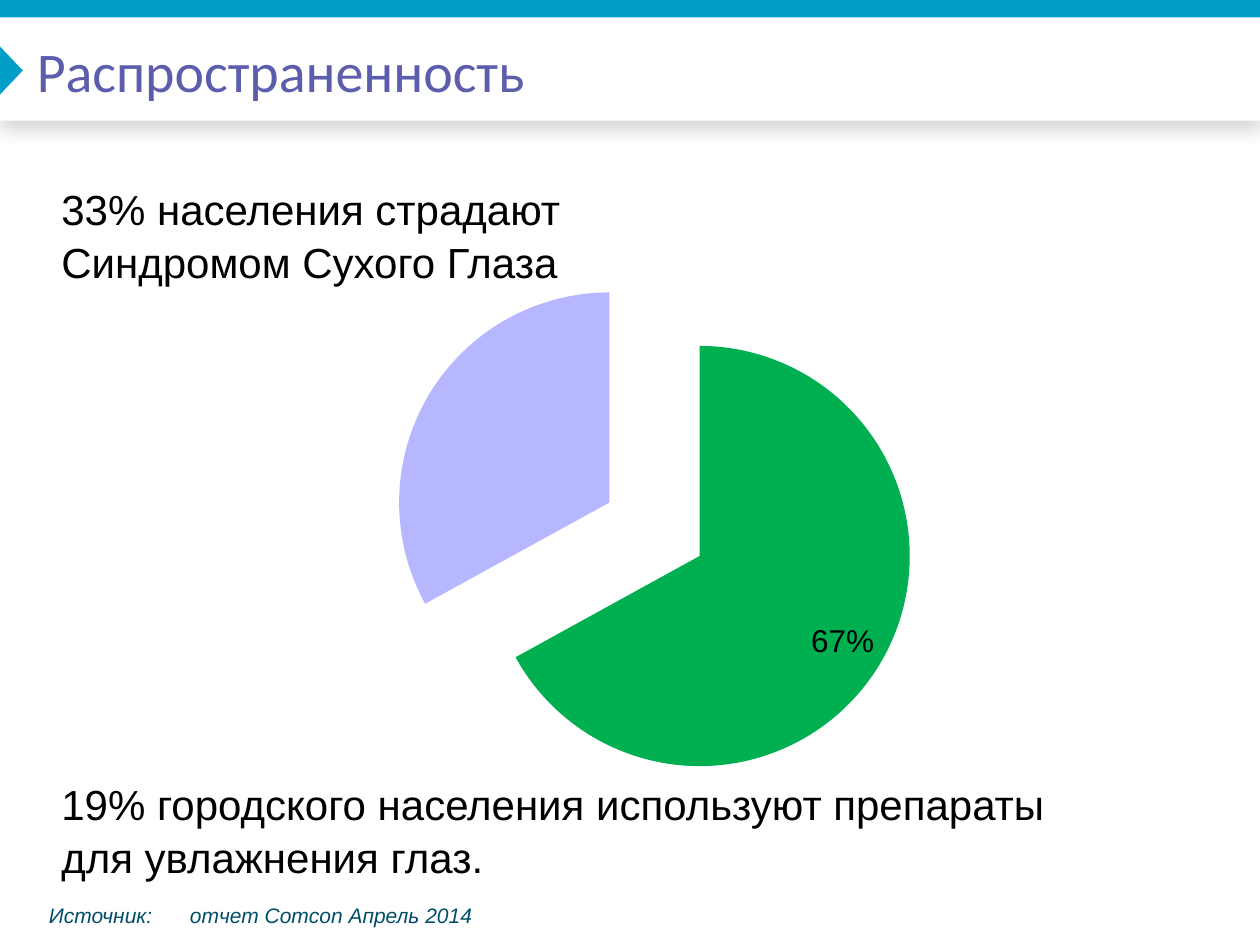
from pptx import Presentation
from pptx.chart.data import CategoryChartData
from pptx.dml.color import RGBColor
from pptx.enum.chart import XL_CHART_TYPE, XL_LABEL_POSITION
from pptx.enum.shapes import MSO_SHAPE
from pptx.enum.text import MSO_ANCHOR, MSO_AUTO_SIZE, PP_ALIGN
from pptx.oxml import parse_xml
from pptx.oxml.ns import nsdecls
from pptx.util import Pt

BLACK = RGBColor(0x00, 0x00, 0x00)
WHITE = RGBColor(0xFF, 0xFF, 0xFF)
CYAN = RGBColor(0x03, 0x9E, 0xC7)
VIOLET = RGBColor(0x5D, 0x5D, 0xAE)
TEAL = RGBColor(0x00, 0x4E, 0x69)
GREEN = RGBColor(0x00, 0xB0, 0x50)
LILAC = RGBColor(0xB7, 0xB7, 0xFF)

BAND_SHADOW = (
    f'<a:effectLst {nsdecls("a")}>'
    '<a:outerShdw blurRad="127000" dist="63500" dir="5400000" algn="t" rotWithShape="0">'
    '<a:srgbClr val="000000"><a:alpha val="15000"/></a:srgbClr>'
    '</a:outerShdw></a:effectLst>'
)


def write_text(shape, text, *, size, color, font="Arial", italic=False,
               inset=None, anchor=MSO_ANCHOR.TOP, spacing=None):
    """Fill a shape with one left-aligned paragraph and format it."""
    frame = shape.text_frame
    frame.text = text
    frame.word_wrap = True
    frame.auto_size = MSO_AUTO_SIZE.NONE
    frame.vertical_anchor = anchor
    if inset is not None:
        frame.margin_left = frame.margin_right = Pt(inset)
        frame.margin_top = frame.margin_bottom = Pt(inset)
    paragraph = frame.paragraphs[0]
    paragraph.alignment = PP_ALIGN.LEFT
    if spacing:
        paragraph.line_spacing = spacing
    for run in paragraph.runs:
        run.font.name = font
        run.font.size = Pt(size)
        run.font.italic = italic
        run.font.color.rgb = color
    return paragraph


class SlideBuilder:
    def __init__(self, slide, font="Arial"):
        self.slide = slide
        self.font = font

    def block(self, preset, left, top, width, height, color, rotation=0):
        shape = self.slide.shapes.add_shape(
            preset, Pt(left), Pt(top), Pt(width), Pt(height))
        shape.shadow.inherit = False
        shape.fill.solid()
        shape.fill.fore_color.rgb = color
        shape.line.fill.background()
        shape.rotation = rotation
        return shape

    def title(self, text, left, top, width, height):
        title = self.slide.shapes.title
        title.left, title.top = Pt(left), Pt(top)
        title.width, title.height = Pt(width), Pt(height)
        write_text(title, text, size=32, color=VIOLET, font="Calibri", inset=0)
        # Bring the title in front of the header band
        self.slide.shapes.element.append(title.element)

    def text(self, text, left, top, width, height, **style):
        box = self.slide.shapes.add_textbox(
            Pt(left), Pt(top), Pt(width), Pt(height))
        return write_text(box, text, font=self.font, **style)

    def pie(self, shares, colors, left, top, width, height, explosion):
        data = CategoryChartData(number_format="General")
        data.categories = [str(i + 1) for i in range(len(shares))]
        data.add_series("Series 1", shares)
        chart = self.slide.shapes.add_chart(
            XL_CHART_TYPE.PIE, Pt(left), Pt(top), Pt(width), Pt(height), data).chart
        chart.has_legend = False
        chart.has_title = False
        chart.font.name = self.font
        chart.font.size = Pt(18)
        chart.font.color.rgb = BLACK

        # Pull the slices apart
        series = chart.plots[0].series[0]
        series._element.cat.addprevious(
            parse_xml(f'<c:explosion {nsdecls("c")} val="{explosion}"/>'))
        for i, color in enumerate(colors):
            fill = series.points[i].format.fill
            fill.solid()
            fill.fore_color.rgb = color

        # Only the first slice carries its percentage
        labels = series.data_labels
        labels.show_percentage = True
        labels.show_value = False
        labels.number_format = "0%"
        labels.number_format_is_linked = False
        labels.position = XL_LABEL_POSITION.INSIDE_END
        labels._element.insert(0, parse_xml(
            f'<c:dLbl {nsdecls("c")}><c:idx val="1"/><c:delete val="1"/></c:dLbl>'))


def main():
    prs = Presentation()
    prs.slide_width, prs.slide_height = Pt(720), Pt(540)
    builder = SlideBuilder(prs.slides.add_slide(prs.slide_layouts[5]))

    # Header
    band = builder.block(MSO_SHAPE.RECTANGLE, 0, 0, 720, 69, WHITE)
    properties = band.element.spPr
    properties.remove(properties.find("{*}effectLst"))
    properties.append(parse_xml(BAND_SHADOW))
    builder.block(MSO_SHAPE.RECTANGLE, 0, 0, 720, 10, CYAN)
    builder.block(MSO_SHAPE.ISOSCELES_TRIANGLE, -7.2, 33.8, 27.4, 13, CYAN, rotation=90)
    builder.title("Распространенность", 21, 21, 648, 75)

    # Statements and source
    margin = 28
    statement = dict(size=24, color=BLACK, spacing=1.05)
    builder.text("33% населения страдают Синдромом Сухого Глаза",
                 margin, 100, 423, 65.5, **statement)
    source = builder.text("Источник:\tотчет Comcon Апрель 2014",
                          margin, 516, 634, 14.4, size=12, color=TEAL,
                          italic=True, inset=0, anchor=MSO_ANCHOR.BOTTOM)
    hanging = source._p.get_or_add_pPr()
    hanging.set("marL", str(Pt(44.6)))
    hanging.set("indent", str(-Pt(44.6)))

    # Prevalence chart
    builder.pie((67, 33), (GREEN, LILAC), 134, 142.5, 480, 320, explosion=25)

    builder.text("19% городского населения используют препараты\vдля увлажнения глаз.",
                 margin, 440, 706, 65.5, **statement)

    prs.save("out.pptx")


if __name__ == "__main__":
    main()
